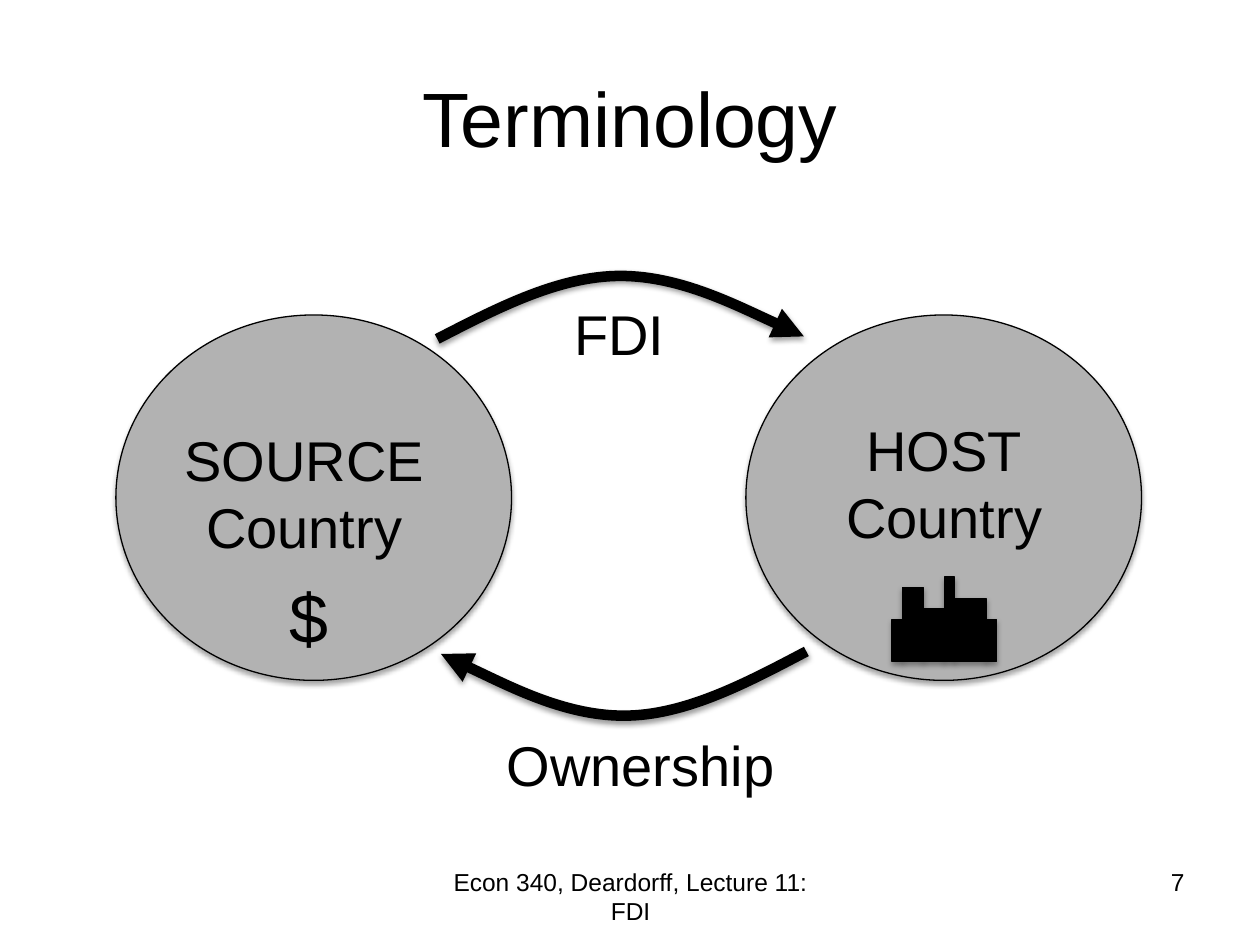
import dataclasses

import pptx
import pptx.dml.color
import pptx.enum.shapes
import pptx.enum.text
import pptx.oxml
import pptx.oxml.ns
import pptx.util
from lxml import etree

Inches = pptx.util.Inches
Pt = pptx.util.Pt
Shape = pptx.enum.shapes.MSO_SHAPE
Align = pptx.enum.text.PP_ALIGN
Anchor = pptx.enum.text.MSO_ANCHOR
qn = pptx.oxml.ns.qn


@dataclasses.dataclass(frozen=True)
class Theme:
    font: str = "Arial"
    ink: str = "000000"
    disc: str = "B2B2B2"
    title: int = 44
    sign: int = 40
    label: int = 32
    foot: int = 14
    edge: float = 0.75
    curve: int = 6


THEME = Theme()


def tint(code):
    return pptx.dml.color.RGBColor.from_string(code)


def assign(target, values):
    for name, value in values.items():
        setattr(target, name, value)


def write(frame, text, size, align=Align.CENTER, anchor=Anchor.TOP):
    """Fill a text frame, one paragraph for each line of text."""
    assign(frame, {"text": text, "word_wrap": True, "vertical_anchor": anchor})
    for para in frame.paragraphs:
        para.alignment = align
        for run in para.runs:
            assign(run.font, {"name": THEME.font, "size": Pt(size)})
            run.font.color.rgb = tint(THEME.ink)


def label(slide, box, text, size=THEME.label, align=Align.CENTER):
    area = slide.shapes.add_textbox(*map(Inches, box))
    write(area.text_frame, text, size, align)


def shade(shape, alpha=35, drop=1.8):
    """Give a shape a soft shadow that falls straight down."""
    shape.shadow.inherit = False
    effects = shape._element.spPr.find(qn("a:effectLst"))
    outer = etree.SubElement(
        effects, qn("a:outerShdw"), blurRad=str(Pt(3.1)), dist=str(Pt(drop)),
        dir="5400000", rotWithShape="0")
    color = etree.SubElement(outer, qn("a:srgbClr"), val=THEME.ink)
    etree.SubElement(color, qn("a:alpha"), val=str(alpha * 1000))


def block(shapes, kind, box, fill):
    shape = shapes.add_shape(kind, *map(Inches, box))
    shape.fill.solid()
    shape.fill.fore_color.rgb = tint(fill)
    shape.line.color.rgb = tint(THEME.ink)
    shape.line.width = Pt(THEME.edge)
    shade(shape)


def plant(slide, box):
    """Draw a factory from columns that stand on one ground line."""
    left, top, width, height = box
    unit = width / 10
    group = slide.shapes.add_group_shape()
    # Start and width in tenths of the plant, height as a share of the box.
    columns = [(1, 2, 7 / 8), (3, 2, 5 / 8), (5, 1, 1), (6, 3, 3 / 4),
               (9, 1, 1 / 2), (0, 1, 1 / 2)]
    for start, span, share in columns:
        tall = height * share
        place = (left + start * unit, top + height - tall, span * unit, tall)
        block(group.shapes, Shape.RECTANGLE, place, THEME.ink)


def curve(slide, box, back=False):
    """Draw an arched arrow; back turns it half way round."""
    left, top, width, height = box
    knots = [(0, 1), (1 / 6, 0.5), (1 / 3, 0), (0.5, 0),
             (2 / 3, 0), (1, 0.96), (1, 0.96)]
    if back:
        knots = [(1 - x, 1 - y) for x, y in knots]
    points = [(Inches(left + x * width), Inches(top + y * height))
              for x, y in knots]
    builder = slide.shapes.build_freeform(*points[0])
    builder.add_line_segments(points[1:], close=False)
    shape = builder.convert_to_shape()

    # Each three straight steps become one cubic curve.
    track = next(shape._element.iter(qn("a:path")))
    steps = track.findall(qn("a:lnTo"))
    for first in range(0, len(steps), 3):
        bend = etree.SubElement(track, qn("a:cubicBezTo"))
        for step in steps[first:first + 3]:
            bend.append(step[0])
            track.remove(step)

    shape.fill.background()
    shape.line.color.rgb = tint(THEME.ink)
    shape.line.width = Pt(THEME.curve)
    etree.SubElement(shape.line._get_or_add_ln(), qn("a:tailEnd"),
                     type="triangle")
    shade(shape, alpha=38, drop=1.6)


def head(slide, box, text):
    title = slide.shapes.title
    sides = ("left", "top", "width", "height")
    assign(title, dict(zip(sides, map(Inches, box))))
    write(title.text_frame, text, THEME.title, anchor=Anchor.MIDDLE)


def flow(slide, box):
    """Draw both countries and the arrows that link them."""
    left, top = box[:2]
    wide, tall = 3.14, 2.9
    for start in (left, left + box[2] - wide):
        block(slide.shapes, Shape.OVAL, (start, top, wide, tall), THEME.disc)
    label(slide, (left + 0.33, top + 0.83, 2.33, 1.18), "SOURCE\nCountry")
    label(slide, (left + 5.41, top + 0.75, 2.33, 1.18), "HOST\nCountry")
    curve(slide, (left + 2.55, top - 0.31, 2.91, 0.5))
    label(slide, (left + 2.83, top - 0.17, 2.33, 1.18), "FDI")
    curve(slide, (left + 2.58, top + 2.67, 2.9, 0.51), back=True)
    label(slide, (left + 3, top + 3.25, 2.33, 1.18), "Ownership")
    plant(slide, (left + 6.16, top + 2.08, 0.83, 0.67))
    label(slide, (left + 1.16, top + 2, 0.75, 0.77), "$", THEME.sign)


def foot(slide, box, text, number):
    left, top, width, height = box
    label(slide, (left, top, 3.17, height), text, THEME.foot)
    label(slide, (left + width - 2.33, top, 2.33, height), number,
          THEME.foot, Align.RIGHT)


def main():
    deck = pptx.Presentation()
    assign(deck, {"slide_width": Inches(10), "slide_height": Inches(7.5)})
    slide = deck.slides.add_slide(deck.slide_layouts[5])
    foot(slide, (3.42, 6.83, 6.08, 0.52),
         "Econ 340, Deardorff, Lecture 11: FDI", "7")
    head(slide, (0.5, 0.3, 9, 1.25), "Terminology")
    flow(slide, (0.92, 2.5, 8.14, 2.9))
    deck.save("out.pptx")


if __name__ == "__main__":
    main()
